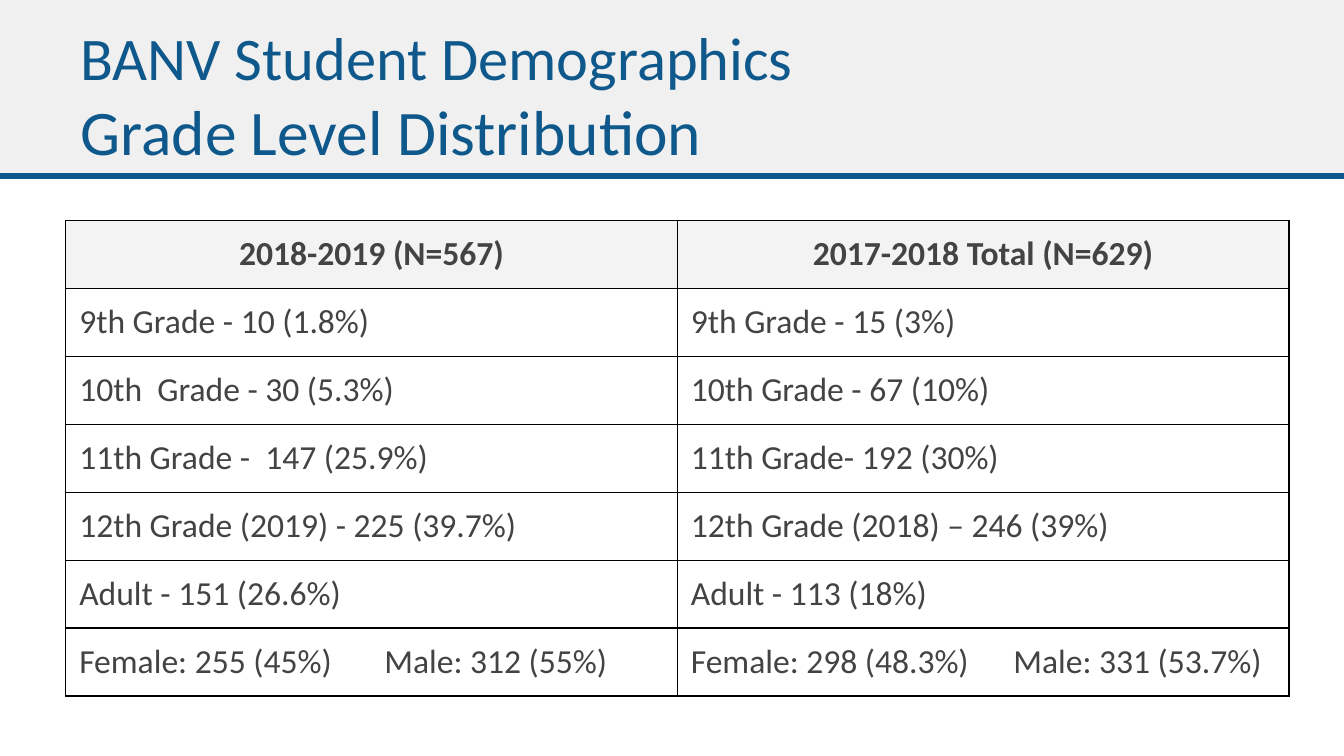
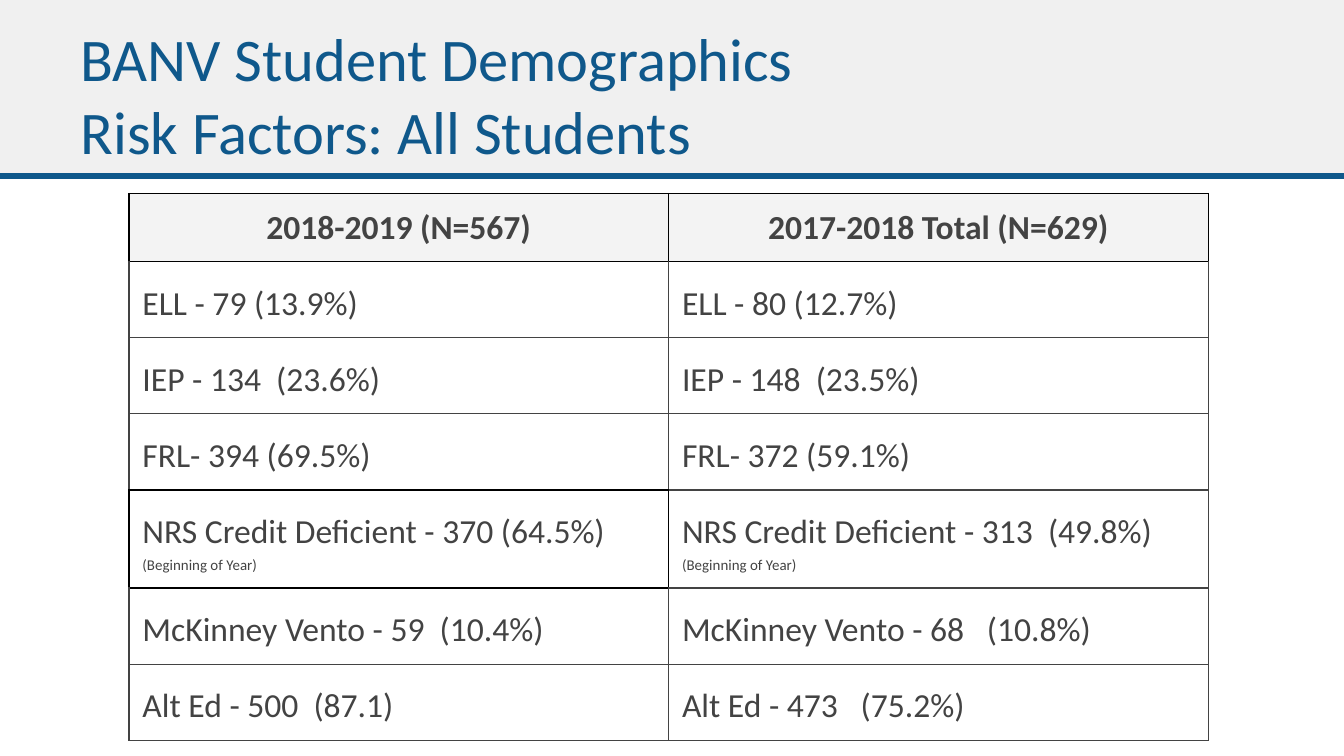
from lxml import etree
from pptx import Presentation
from pptx.dml.color import RGBColor
from pptx.enum.shapes import MSO_CONNECTOR, MSO_SHAPE
from pptx.enum.text import MSO_ANCHOR, MSO_AUTO_SIZE, PP_ALIGN
from pptx.oxml.ns import qn
from pptx.util import Inches, Pt

RECTANGLE = MSO_SHAPE.RECTANGLE
STRAIGHT = MSO_CONNECTOR.STRAIGHT
MIDDLE = MSO_ANCHOR.MIDDLE
LEFT, CENTER = PP_ALIGN.LEFT, PP_ALIGN.CENTER
FIXED_SIZE = MSO_AUTO_SIZE.NONE

BLUE = RGBColor(0x0F, 0x58, 0x8B)
BAND_GRAY = RGBColor(0xF0, 0xF0, 0xF0)
HEADER_GRAY = RGBColor(0xF3, 0xF3, 0xF3)
TEXT_GRAY = RGBColor(0x43, 0x43, 0x43)
BLACK = RGBColor(0, 0, 0)

FONT = "Calibri"
WIDTH = 10
HEIGHT = WIDTH * 9 / 16
BAND_HEIGHT = 1.31
TITLE_BOX = (0.5, 0.23, 7.67, 0.94)
PADDING = Inches(0.1)
BORDER_WIDTH = Pt(0.75)
TEXT_SIZE, NOTE_SIZE = 18, 8
HEADER = ("2018-2019 (N=567)", "2017-2018 Total (N=629)")
NOTE = "(Beginning of Year)"

SLIDES = [
    {
        "title": [("BANV Student Demographics", 32.4), ("Grade Level Distribution", 34)],
        "place": (0.49, 1.64, 9.1),
        "row_heights": [0.5] * 7,
        "line_spacing": 1.0,
        "border": BLACK,
        "black_cells": set(),
        "tabs": (2.27, 2.4),
        "rows": [
            ("9th Grade - 10 (1.8%)", "9th Grade - 15 (3%)"),
            ("10th  Grade - 30 (5.3%)", "10th Grade - 67 (10%)"),
            ("11th Grade -  147 (25.9%)", "11th Grade- 192 (30%)"),
            ("12th Grade (2019) - 225 (39.7%)", "12th Grade (2018) – 246 (39%)"),
            ("Adult - 151 (26.6%)", "Adult - 113 (18%)"),
            ("Female: 255 (45%)\tMale: 312 (55%)", "Female: 298 (48.3%)\tMale: 331 (53.7%)"),
        ],
    },
    {
        "title": [("BANV Student Demographics", 32.4), ("Risk Factors: All Students", 32.4)],
        "place": (0.96, 1.44, 8.03),
        "row_heights": [0.5] + [0.56] * 3 + [0.73] + [0.56] * 2,
        "line_spacing": 1.2,
        "border": TEXT_GRAY,
        "black_cells": {(0, 0), (0, 1), (4, 0)},
        "tabs": (),
        "rows": [
            ("ELL - 79 (13.9%)", "ELL - 80 (12.7%)"),
            ("IEP - 134  (23.6%)", "IEP - 148  (23.5%)"),
            ("FRL- 394 (69.5%)", "FRL- 372 (59.1%)"),
            (f"NRS Credit Deficient - 370 (64.5%)\v{NOTE}", f"NRS Credit Deficient - 313  (49.8%)\n{NOTE}"),
            ("McKinney Vento - 59  (10.4%)", "McKinney Vento - 68   (10.8%)"),
            ("Alt Ed - 500  (87.1)", "Alt Ed - 473   (75.2%)"),
        ],
    },
]


def set_font(paragraph, size, color, bold=False):
    font = paragraph.font
    font.name, font.size, font.bold = FONT, Pt(size), bold
    font.color.rgb = color


def set_padding(frame):
    frame.margin_left = frame.margin_right = PADDING
    frame.margin_top = frame.margin_bottom = PADDING


def add_band(slide, layout):
    band = slide.shapes.add_shape(RECTANGLE, 0, 0, Inches(WIDTH), Inches(BAND_HEIGHT))
    band.shadow.inherit = False
    band.fill.solid()
    band.fill.fore_color.rgb = BAND_GRAY
    band.line.fill.background()
    rule = slide.shapes.add_connector(
        STRAIGHT, 0, Inches(BAND_HEIGHT), Inches(WIDTH), Inches(BAND_HEIGHT))
    rule.line.color.rgb = BLUE
    rule.line.width = Pt(3)
    etree.SubElement(rule.element.spPr, qn("a:effectLst"))
    layout_tree = layout.placeholders[0].element.getparent()
    for index, shape in enumerate((band, rule)):
        shape.element.xpath(".//p:cNvPr")[0].set("id", str(100 + index))
        layout_tree.insert(2 + index, shape.element)


def add_title(slide, lines):
    title = slide.shapes.title
    title.left, title.top, title.width, title.height = map(Inches, TITLE_BOX)
    frame = title.text_frame
    frame.text = "\n".join(text for text, size in lines)
    frame.auto_size = FIXED_SIZE
    frame.word_wrap = True
    frame.vertical_anchor = MIDDLE
    set_padding(frame)
    for paragraph, (text, size) in zip(frame.paragraphs, lines):
        paragraph.alignment = LEFT
        set_font(paragraph, size, BLUE)


def add_tab(paragraph, position):
    tabs = etree.SubElement(paragraph._p.get_or_add_pPr(), qn("a:tabLst"))
    etree.SubElement(tabs, qn("a:tab"), pos=str(Inches(position)), algn="l")


def set_borders(cell, row, column, content):
    neighbours = {"L": (row, column - 1), "R": (row, column + 1),
                  "T": (row - 1, column), "B": (row + 1, column)}
    properties = cell._tc.get_or_add_tcPr()
    for index, (side, neighbour) in enumerate(neighbours.items()):
        is_black = content["black_cells"] & {(row, column), neighbour}
        line = etree.Element(qn(f"a:ln{side}"), w=str(BORDER_WIDTH))
        fill = etree.SubElement(line, qn("a:solidFill"))
        etree.SubElement(fill, qn("a:srgbClr"), val=str(BLACK if is_black else content["border"]))
        properties.insert(index, line)


def fill_cell(cell, text, row, column, content):
    is_header = row == 0
    set_padding(cell)
    cell.text = text
    for paragraph in cell.text_frame.paragraphs:
        if "\t" in text:
            add_tab(paragraph, content["tabs"][column])
        paragraph.alignment = CENTER if is_header else LEFT
        paragraph.line_spacing = 1.0 if is_header else content["line_spacing"]
        set_font(paragraph, TEXT_SIZE, TEXT_GRAY, is_header)
        for run in paragraph.runs:
            if run.text == NOTE:
                run.font.size = Pt(NOTE_SIZE)
    if is_header:
        cell.fill.solid()
        cell.fill.fore_color.rgb = HEADER_GRAY
    else:
        cell.fill.background()
    set_borders(cell, row, column, content)


def add_demographics(slide, content):
    rows = [HEADER] + content["rows"]
    left, top, width = content["place"]
    heights = content["row_heights"]
    table = slide.shapes.add_table(
        len(rows), len(HEADER), Inches(left), Inches(top), Inches(width), Inches(sum(heights))).table
    table.first_row = table.horz_banding = False
    for row, (texts, height) in enumerate(zip(rows, heights)):
        table.rows[row].height = Inches(height)
        for column, text in enumerate(texts):
            fill_cell(table.cell(row, column), text, row, column, content)


def main():
    presentation = Presentation()
    presentation.slide_width, presentation.slide_height = Inches(WIDTH), Inches(HEIGHT)
    layout = presentation.slide_layouts.get_by_name("Title Only")
    for index, content in enumerate(SLIDES):
        slide = presentation.slides.add_slide(layout)
        if index == 0:
            add_band(slide, layout)
        add_title(slide, content["title"])
        add_demographics(slide, content)
    presentation.save("out.pptx")


if __name__ == "__main__":
    main()
